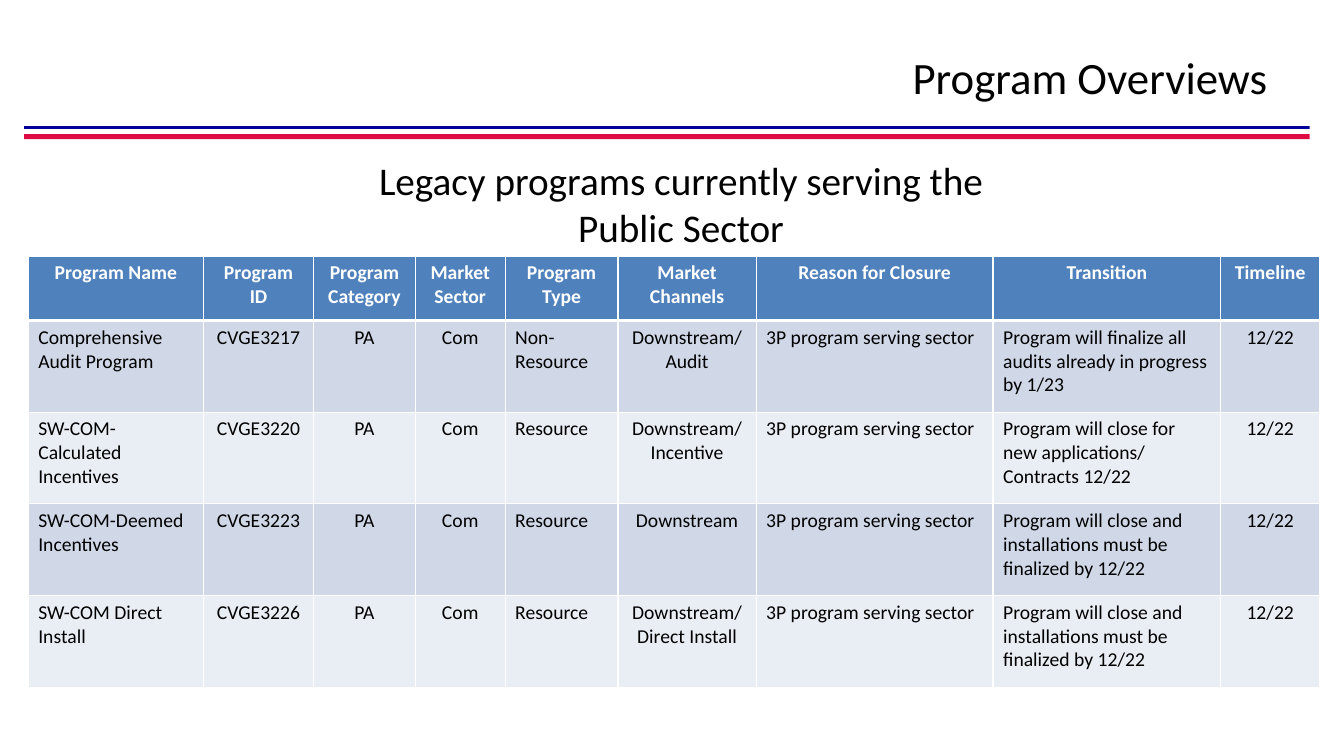
from dataclasses import dataclass
from lxml.etree import SubElement
from pptx import Presentation
from pptx.dml.color import RGBColor
from pptx.enum.shapes import MSO_SHAPE
from pptx.enum.text import MSO_ANCHOR, PP_ALIGN
from pptx.oxml.ns import qn
from pptx.util import Inches, Pt


@dataclass(frozen=True)
class Theme:
    font: str = "Calibri"
    ink: str = "000000"
    white: str = "FFFFFF"
    red: str = "DE0A42"
    navy: str = "000099"
    header: str = "4F81BD"
    bands: tuple = ("D0D8E8", "E9EDF4")
    title_size: int = 32
    subtitle_size: int = 28
    table_size: int = 14
    grid_line: int = 1
    header_line: int = 3


THEME = Theme()
WIDTH, HEIGHT = Inches(13.33), Inches(7.5)
LEFT, CENTER, RIGHT = PP_ALIGN.LEFT, PP_ALIGN.CENTER, PP_ALIGN.RIGHT

# Heading, width in percent of the slide, alignment of the body cells
COLUMNS = [
    ("Program Name", 13.05, LEFT),
    ("Program ID", 8.18, CENTER),
    ("Program Category", 7.58, CENTER),
    ("Market Sector", 6.68, CENTER),
    ("Program Type", 8.4, LEFT),
    ("Market Channels", 10.28, CENTER),
    ("Reason for Closure", 17.63, LEFT),
    ("Transition", 16.95, LEFT),
    ("Timeline", 7.35, CENTER),
]
HEADER_HEIGHT, BODY_HEIGHT = 8.53, 12.13

# Fields that differ: name, ID, type, channels, transition
PROGRAMS = [
    ("Comprehensive Audit Program", "CVGE3217", "Non-Resource", "Downstream/ Audit",
     "Program will finalize all audits already in progress by 1/23"),
    ("SW-COM-Calculated Incentives", "CVGE3220", "Resource", "Downstream/ Incentive",
     "Program will close for new applications/ Contracts 12/22"),
    ("SW-COM-Deemed Incentives", "CVGE3223", "Resource", "Downstream",
     "Program will close and installations must be finalized by 12/22"),
    ("SW-COM Direct Install", "CVGE3226", "Resource", "Downstream/Direct Install",
     "Program will close and installations must be finalized by 12/22"),
]


def across(percent):
    return round(WIDTH * percent / 100)


def down(percent):
    return round(HEIGHT * percent / 100)


def place(left, top, width, height):
    return across(left), down(top), across(width), down(height)


def write(frame, text, size, align, color=THEME.ink, bold=False):
    paragraph = frame.paragraphs[0]
    paragraph.text = text
    paragraph.alignment = align
    font = paragraph.runs[0].font
    for name, value in {"name": THEME.font, "size": Pt(size), "bold": bold}.items():
        setattr(font, name, value)
    font.color.rgb = RGBColor.from_string(color)


def add_rule(slide, area, color):
    rule = slide.shapes.add_shape(MSO_SHAPE.RECTANGLE, *place(*area))
    rule.shadow.inherit = False
    rule.fill.solid()
    rule.fill.fore_color.rgb = RGBColor.from_string(color)
    rule.line.fill.background()


def add_heading(slide, area, text, size, align, anchor):
    frame = slide.shapes.add_textbox(*place(*area)).text_frame
    for name, value in {"word_wrap": True, "vertical_anchor": anchor}.items():
        setattr(frame, name, value)
    write(frame, text, size, align)


def style_cell(cell, fill, borders):
    # Borders come before the fill in the cell properties
    properties = cell._tc.get_or_add_tcPr()
    for side, points in borders.items():
        line = SubElement(properties, qn(f"a:ln{side}"), w=str(Pt(points)))
        paint = SubElement(line, qn("a:solidFill"))
        SubElement(paint, qn("a:srgbClr"), val=THEME.white)
    cell.fill.solid()
    cell.fill.fore_color.rgb = RGBColor.from_string(fill)


def add_program_table(slide, left, top):
    headings, widths, alignments = zip(*COLUMNS)
    body = [
        (name, code, "PA", "Com", kind, channels, "3P program serving sector", transition, "12/22")
        for name, code, kind, channels, transition in PROGRAMS
    ]
    height = HEADER_HEIGHT + BODY_HEIGHT * len(body)
    table = slide.shapes.add_table(
        len(body) + 1, len(COLUMNS), *place(left, top, sum(widths), height)
    ).table
    for column, width in zip(table.columns, widths):
        column.width = across(width)

    for r, texts in enumerate([headings, *body]):
        is_header = r == 0
        table.rows[r].height = down(HEADER_HEIGHT if is_header else BODY_HEIGHT)
        fill = THEME.header if is_header else THEME.bands[(r - 1) % 2]
        borders = dict.fromkeys("LRTB", THEME.grid_line)
        if r < 2:
            borders["B" if is_header else "T"] = THEME.header_line
        for c, text in enumerate(texts):
            cell = table.cell(r, c)
            style_cell(cell, fill, borders)
            write(cell.text_frame, text, THEME.table_size,
                  CENTER if is_header else alignments[c],
                  THEME.white if is_header else THEME.ink, is_header)


def main():
    deck = Presentation()
    deck.slide_width, deck.slide_height = WIDTH, HEIGHT
    slide = deck.slides.add_slide(deck.slide_layouts[6])

    # Double rule under the title
    add_rule(slide, (1.8, 17.73, 95.65, 0.67), THEME.red)
    add_rule(slide, (1.8, 16.67, 95.65, 0.4), THEME.navy)

    # Title, table and its caption
    add_heading(slide, (22.5, 4, 72.54, 12.13), "Program Overviews",
                THEME.title_size, RIGHT, MSO_ANCHOR.MIDDLE)
    add_program_table(slide, 2.1, 33.87)
    add_heading(slide, (26.63, 20, 48.09, 13.87),
                "Legacy programs currently serving the Public Sector",
                THEME.subtitle_size, CENTER, MSO_ANCHOR.TOP)

    deck.save("out.pptx")


if __name__ == "__main__":
    main()
